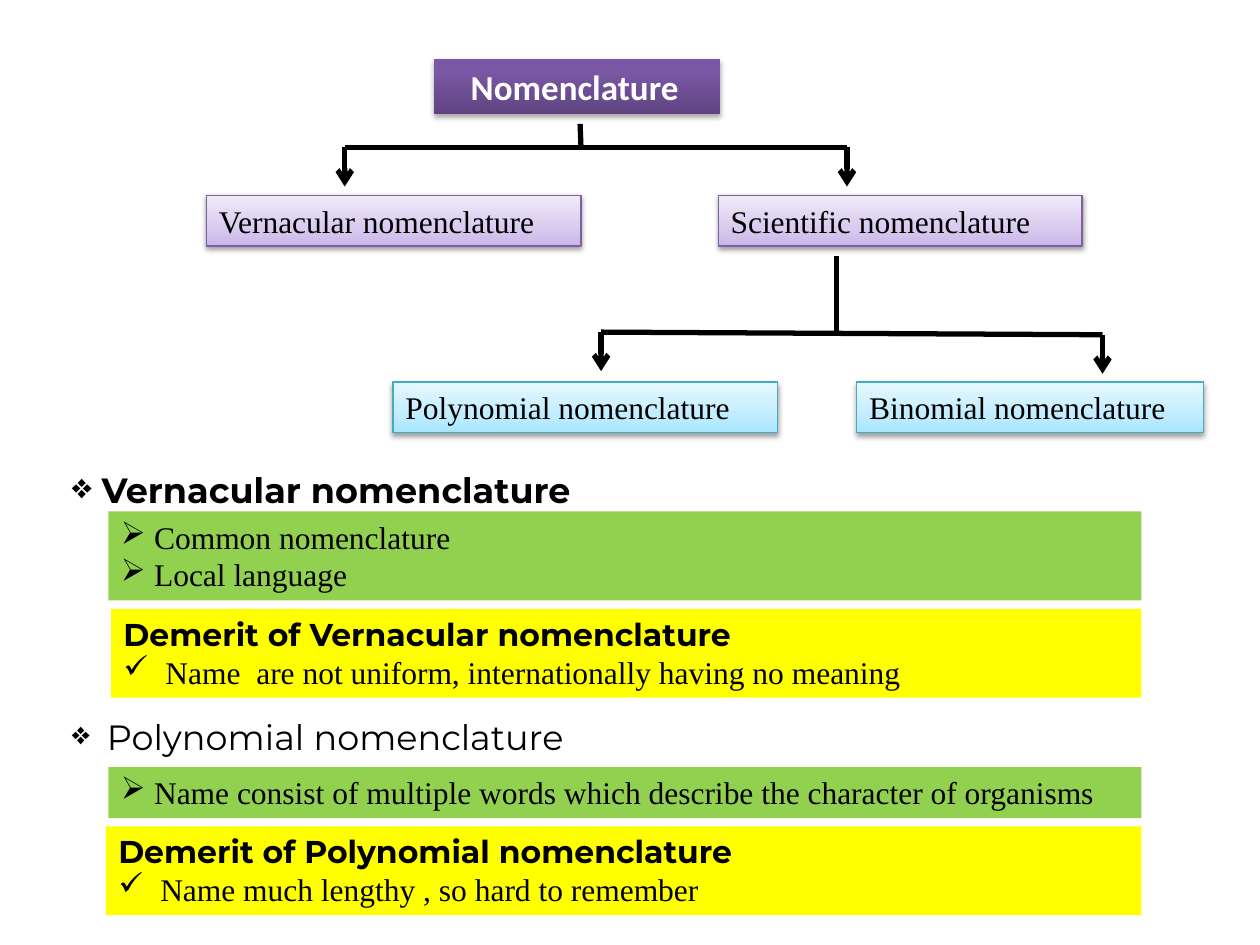
from collections import namedtuple

from lxml import etree
from pptx import Presentation
from pptx.dml.color import RGBColor
from pptx.enum import shapes, text
from pptx.oxml import ns
from pptx.util import Pt

Box = namedtuple("Box", "left top width height")

BLACK = RGBColor(0, 0, 0)
WHITE = RGBColor(255, 255, 255)
GREEN = RGBColor(0x92, 0xD0, 0x50)
YELLOW = RGBColor(255, 255, 0)
PURPLE_LINE = RGBColor(0x7D, 0x60, 0xA0)
CYAN_LINE = RGBColor(0x46, 0xAA, 0xC5)
DEEP_PURPLE = [(0, RGBColor(0x5F, 0x44, 0x80)), (80, RGBColor(0x7B, 0x58, 0xA6)),
               (100, RGBColor(0x7C, 0x57, 0xA8))]
PALE_PURPLE = [(0, RGBColor(0xC9, 0xB5, 0xE8)), (35, RGBColor(0xD8, 0xCB, 0xEE)),
               (100, RGBColor(0xF0, 0xEA, 0xF9))]
PALE_CYAN = [(0, RGBColor(0xA7, 0xE6, 0xFF)), (35, RGBColor(0xC1, 0xED, 0xFF)),
             (100, RGBColor(0xE7, 0xF8, 0xFF))]
SERIF, SANS, TITLE = "Times New Roman", "Montserrat", "Calibri"
LINE_HEIGHT, PADDING = 21.8, 7.2


def add_xml(parent, tag, **attributes):
    values = {name: str(value) for name, value in attributes.items()}
    return etree.SubElement(parent, ns.qn(tag), values)


def write(para, words, font=SERIF, size=18, bold=False, color=BLACK,
          bullet=None, bullet_size=100, indent=0):
    para.alignment = text.PP_ALIGN.LEFT
    span = para.add_run()
    span.text = words
    span.font.name, span.font.size, span.font.bold = font, Pt(size), bold
    span.font.color.rgb = color
    if bullet:
        props = para._p.get_or_add_pPr()
        props.set("marL", str(Pt(indent)))
        props.set("indent", str(-Pt(indent)))
        add_xml(props, "a:buSzPct", val=bullet_size * 1000)
        add_xml(props, "a:buChar", char=bullet)


def set_frame(shape):
    frame = shape.text_frame
    frame.word_wrap = True
    frame.auto_size = text.MSO_AUTO_SIZE.SHAPE_TO_FIT_TEXT
    frame.vertical_anchor = text.MSO_ANCHOR.TOP
    return frame


def add_panel(page, box, fill=None):
    panel = page.shapes.add_shape(shapes.MSO_SHAPE.RECTANGLE, *map(Pt, box))
    panel.shadow.inherit = False
    panel.line.fill.background()
    if fill is not None:
        panel.fill.solid()
        panel.fill.fore_color.rgb = fill
    return panel


def add_node(page, box, words, stops, line=None, opacity=38, distance=1.6,
             margin=PADDING, **style):
    node = add_panel(page, box)
    node.fill.gradient()
    node.fill.gradient_angle = 90
    props = node._element.spPr
    stop_list = props.find(".//" + ns.qn("a:gsLst"))
    for stop in list(stop_list):
        stop_list.remove(stop)
    for position, color in stops:
        stop = add_xml(stop_list, "a:gs", pos=position * 1000)
        add_xml(stop, "a:srgbClr", val=color)
    if line is not None:
        node.line.color.rgb = line
        node.line.width = Pt(0.75)
    shadow = add_xml(props.find(ns.qn("a:effectLst")), "a:outerShdw", blurRad=Pt(3.1),
                     dist=Pt(distance), dir=90 * 60000, rotWithShape=0)
    shade = add_xml(shadow, "a:srgbClr", val=BLACK)
    add_xml(shade, "a:alpha", val=opacity * 1000)
    frame = set_frame(node)
    frame.margin_left = Pt(margin)
    write(frame.paragraphs[0], words, **style)


def add_line(page, start, end, arrow=False):
    line = page.shapes.add_connector(shapes.MSO_CONNECTOR.STRAIGHT,
                                     *map(Pt, start + end))
    line.line.color.rgb = BLACK
    line.line.width = Pt(3)
    if arrow:
        add_xml(line.line._get_or_add_ln(), "a:tailEnd", type="arrow")
    add_xml(line._element.spPr, "a:effectLst")


def add_fork(page, box, stem_top, stem_foot, tilt=0):
    left, top, right = box.left, box.top, box.left + box.width
    add_line(page, stem_top, stem_foot)
    add_line(page, (left, top), (right, top + tilt))
    for x, y in ((left, top), (right, top + tilt)):
        add_line(page, (x, y), (x, y + box.height), arrow=True)


def add_tree(page, box):
    left, top = box.left, box.top

    def place(x, y, width, height=29):
        return Box(left + x, top + y, width, height)

    add_node(page, place(130, 0, 163.5, 31.5), "Nomenclature", DEEP_PURPLE,
             opacity=35, distance=1.8, margin=21, font=TITLE, size=20,
             bold=True, color=WHITE)
    add_fork(page, place(79, 50.5, 287, 22.3),
             (left + 213.5, top + 37), (left + 214, top + 50.5))
    add_fork(page, place(225.5, 156, 286.5, 22.3),
             (left + 360, top + 112.5), (left + 360, top + 157), tilt=1.5)
    for words, x, y, width, stops, line in (
            ("Vernacular nomenclature", 0, 77.8, 214, PALE_PURPLE, PURPLE_LINE),
            ("Scientific nomenclature", 292.4, 77.8, 208, PALE_PURPLE, PURPLE_LINE),
            ("Polynomial nomenclature", 106.6, 184.4, 219.6, PALE_CYAN, CYAN_LINE),
            ("Binomial nomenclature", 371.6, 184.4, 198, PALE_CYAN, CYAN_LINE)):
        add_node(page, place(x, y, width), words, stops, line)


def add_section(page, box, heading, points, demerit, reason,
                heading_style, points_top, demerit_left):
    title = page.shapes.add_textbox(*map(Pt, (box.left, box.top, 360, 31.5)))
    write(set_frame(title).paragraphs[0], heading, font=SANS, size=20, bullet="❖",
          **heading_style)

    points_left = 28
    points_height = len(points) * LINE_HEIGHT + PADDING
    panel = add_panel(page, Box(box.left + points_left, box.top + points_top,
                                box.width - points_left, points_height), GREEN)
    frame = set_frame(panel)
    for index, point in enumerate(points):
        para = frame.add_paragraph() if index else frame.paragraphs[0]
        write(para, point, bullet="➢", indent=19)

    demerit_top = box.top + points_top + points_height + 4.8
    panel = add_panel(page, Box(box.left + demerit_left, demerit_top,
                                box.width - demerit_left,
                                2 * LINE_HEIGHT + PADDING), YELLOW)
    frame = set_frame(panel)
    write(frame.paragraphs[0], demerit, font=SANS, bold=True)
    write(frame.add_paragraph(), reason, bullet="✓", indent=24)


def main():
    deck = Presentation()
    deck.slide_width, deck.slide_height = Pt(720), Pt(540)
    page = deck.slides.add_slide(deck.slide_layouts[6])
    add_tree(page, Box(118, 33.8, 570, 214))
    add_section(page, Box(34, 264.3, 618.3, 136), "Vernacular nomenclature",
                ["Common nomenclature", "Local language"],
                "Demerit of Vernacular nomenclature",
                "Name  are not uniform, internationally having no meaning",
                {"bold": True, "indent": 17}, points_top=28, demerit_left=29.5)
    add_section(page, Box(34, 405.4, 618.3, 118), "Polynomial nomenclature",
                ["Name consist of multiple words which describe the character of organisms"],
                "Demerit of Polynomial nomenclature",
                "Name much lengthy , so hard to remember",
                {"bullet_size": 90, "indent": 20}, points_top=33, demerit_left=26.5)
    deck.save("out.pptx")


if __name__ == "__main__":
    main()
